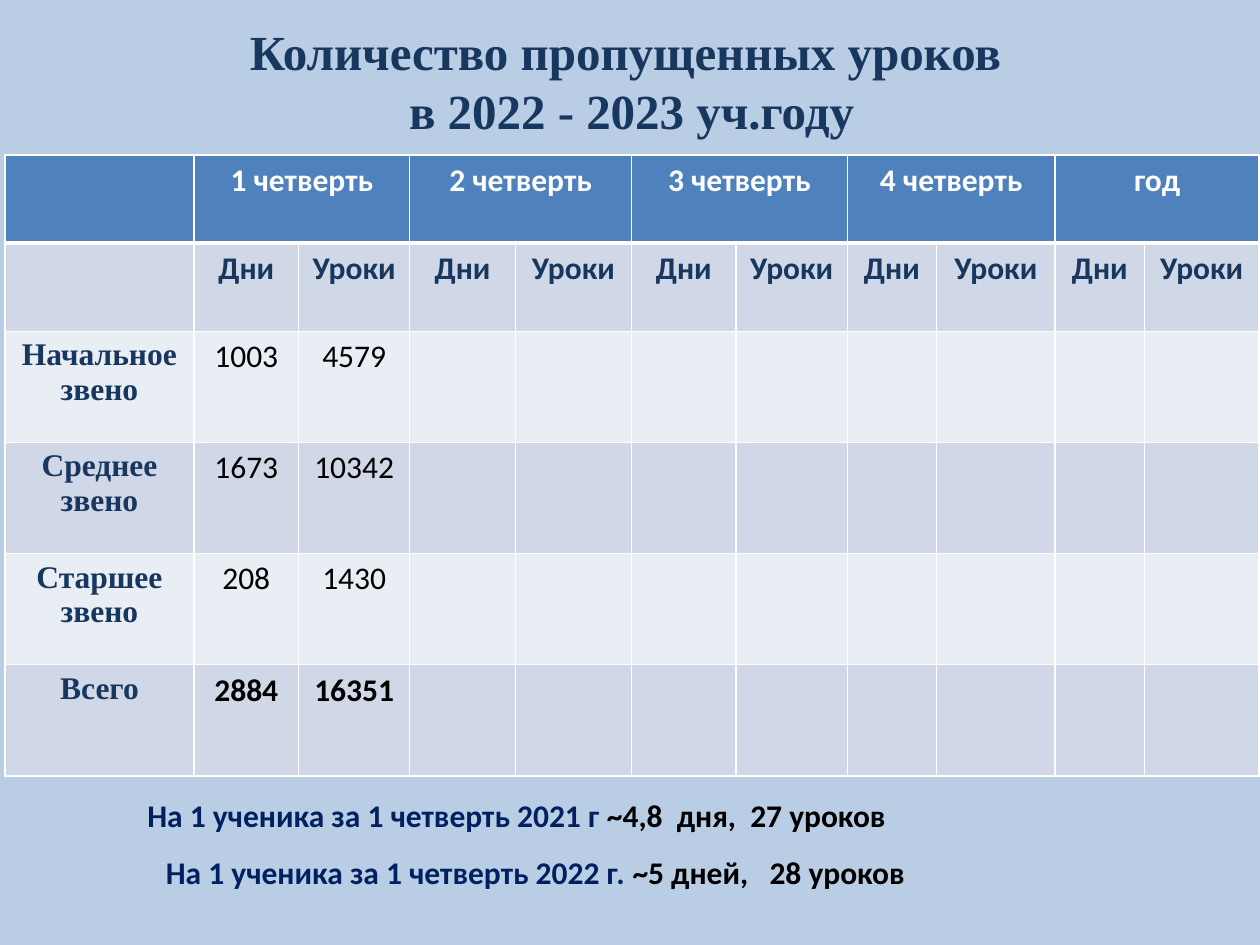
from dataclasses import dataclass

from lxml import etree
from pptx import Presentation
from pptx import util as u
from pptx.dml.color import RGBColor
from pptx.enum import text
from pptx.oxml import ns

SKY = RGBColor(0xB9, 0xCD, 0xE5)
BLUE = RGBColor(0x4F, 0x81, 0xBD)
BAND = RGBColor(0xD0, 0xD8, 0xE8)
PALE = RGBColor(0xE9, 0xED, 0xF4)
NAVY = RGBColor(0x17, 0x37, 0x5E)
INK = RGBColor(0x00, 0x20, 0x60)
BLACK = RGBColor(0, 0, 0)
WHITE = RGBColor(0xFF, 0xFF, 0xFF)
SANS, SERIF = "Calibri", "Times New Roman"
COLUMNS = (3.81, 2.11, 2.24, 2.13, 2.34, 2.11, 2.24, 1.8, 2.39, 1.8, 2.31)
HEIGHTS = (1.78, 1.78, 2.24, 2.24, 2.24, 2.24)
PERIODS = ("1 четверть", "2 четверть", "3 четверть", "4 четверть", "год")


@dataclass
class Style:
    color: RGBColor
    font: str = SANS
    size: int = 18
    bold: bool = True


@dataclass
class Level:
    name: str
    days: str
    lessons: str
    bold: bool = False


@dataclass
class Note:
    box: tuple[float, float, float, float]
    label: str
    value: str


LEVELS = (
    Level("Начальное звено", "1003", "4579"),
    Level("Среднее звено", "1673", "10342"),
    Level("Старшее звено", "208", "1430"),
    Level("Всего", "2884", "16351", True),
)
NOTES = (
    Note((0.71, 15.93, 19.41, 1.8), "На 1 ученика за 1 четверть 2021 г ", "~4,8  дня,  27 уроков"),
    Note((2.49, 17.07, 16.61, 1.02), "На 1 ученика за 1 четверть 2022 г. ", "~5 дней,   28 уроков"),
)


def set_font(font, style: Style) -> None:
    font.name, font.size, font.bold = style.font, u.Pt(style.size), style.bold
    font.color.rgb = style.color


def add_box(s, box: tuple[float, float, float, float]):
    tf = s.shapes.add_textbox(*map(u.Cm, box)).text_frame
    tf.word_wrap = True
    tf.paragraphs[0].alignment = text.PP_ALIGN.CENTER
    return tf


def add_title(s) -> None:
    tf = add_box(s, (1.3, 0.03, 22.86, 3.18))
    tf.vertical_anchor = text.MSO_ANCHOR.MIDDLE
    p = tf.paragraphs[0]
    p.text = "Количество пропущенных уроков \vв 2022 - 2023 уч.году"
    set_font(p.font, Style(NAVY, SERIF, 28))


def add_note(s, note: Note) -> None:
    p = add_box(s, note.box).paragraphs[0]
    for words, color in ((note.label, INK), (note.value, BLACK)):
        r = p.add_run()
        r.text = words
        set_font(r.font, Style(color))


def set_borders(cell, bottom: int) -> None:
    tc_pr = cell._tc.get_or_add_tcPr()
    for i, (side, width) in enumerate((("L", 1), ("R", 1), ("T", 1), ("B", bottom))):
        ln = etree.Element(ns.qn(f"a:ln{side}"), w=str(u.Pt(width)))
        fill = etree.SubElement(ln, ns.qn("a:solidFill"))
        etree.SubElement(fill, ns.qn("a:srgbClr"), val=str(WHITE))
        tc_pr.insert(i, ln)


def write(cell, words: str, style: Style) -> None:
    p = cell.text_frame.paragraphs[0]
    p.text = words
    p.alignment = text.PP_ALIGN.CENTER
    set_font(p.font, style)


def add_absences(s) -> None:
    table = s.shapes.add_table(
        len(HEIGHTS), len(COLUMNS), u.Cm(0.1), u.Cm(3.12),
        u.Cm(sum(COLUMNS)), u.Cm(sum(HEIGHTS)),
    ).table
    for column, width in zip(table.columns, COLUMNS):
        column.width = u.Cm(width)
    for i, (row, height) in enumerate(zip(table.rows, HEIGHTS)):
        row.height = u.Cm(height)
        for cell in row.cells:
            cell.fill.solid()
            cell.fill.fore_color.rgb = BLUE if i == 0 else BAND if i % 2 else PALE
            set_borders(cell, 1 if i else 3)
    for i, period in enumerate(PERIODS):
        left = 1 + 2 * i
        table.cell(0, left).merge(table.cell(0, left + 1))
        write(table.cell(0, left), period, Style(WHITE))
        write(table.cell(1, left), "Дни", Style(NAVY))
        write(table.cell(1, left + 1), "Уроки", Style(NAVY))
    for i, level in enumerate(LEVELS, 2):
        write(table.cell(i, 0), level.name, Style(NAVY, SERIF))
        write(table.cell(i, 1), level.days, Style(BLACK, bold=level.bold))
        write(table.cell(i, 2), level.lessons, Style(BLACK, bold=level.bold))


def main() -> None:
    """Build the slide of missed lessons by school level and term."""
    prs = Presentation()
    prs.slide_width, prs.slide_height = u.Cm(25.4), u.Cm(19.05)
    s = prs.slides.add_slide(prs.slide_layouts[6])
    s.background.fill.solid()
    s.background.fill.fore_color.rgb = SKY
    add_title(s)
    add_absences(s)
    for note in NOTES:
        add_note(s, note)
    prs.save("out.pptx")


if __name__ == "__main__":
    main()
